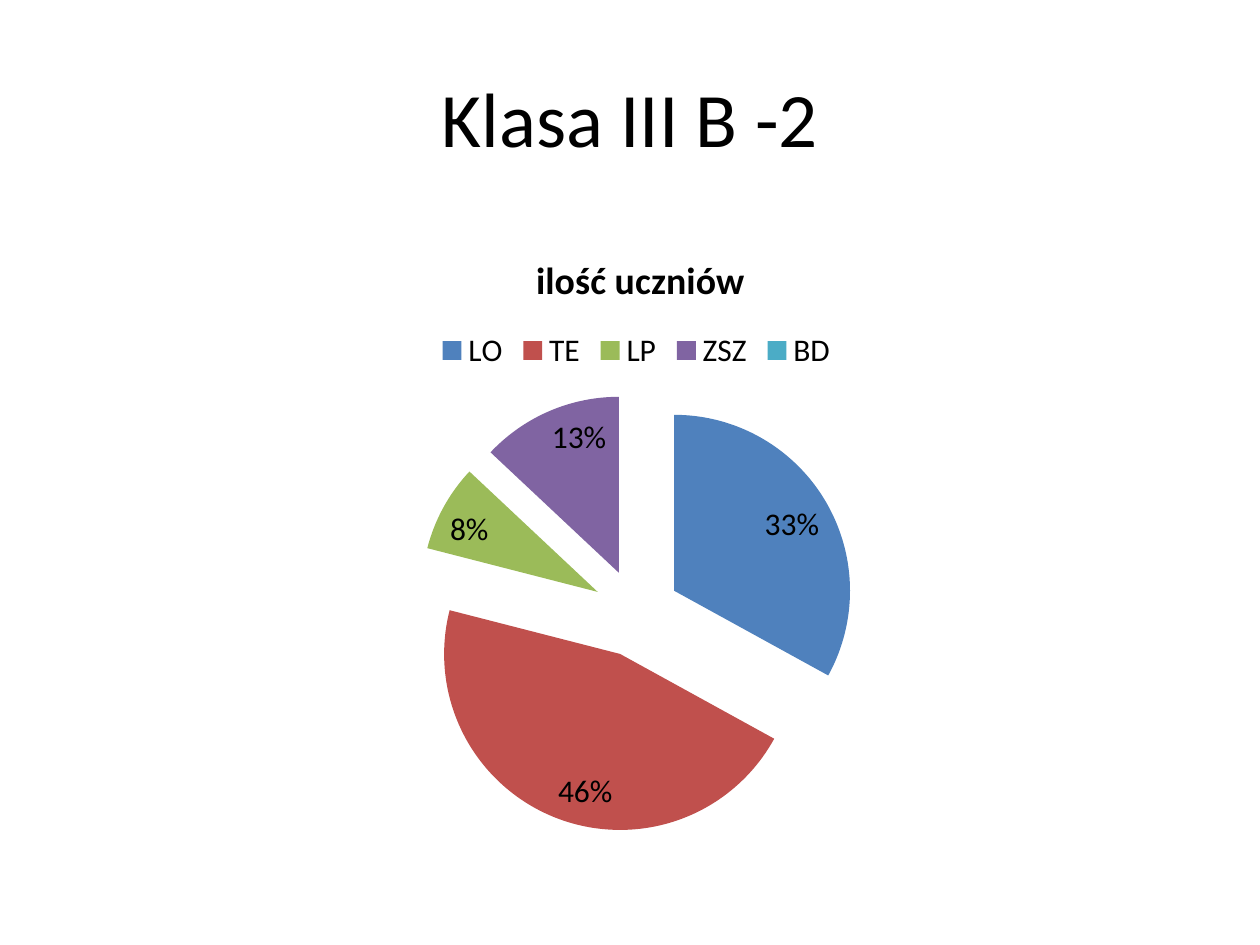
"""Builds a slide with an exploded pie chart of pupils by school type."""
import pptx
import pptx.chart.data
import pptx.dml.color
import pptx.enum.chart
import pptx.enum.text
import pptx.oxml
import pptx.oxml.ns
import pptx.util

Inches = pptx.util.Inches
Pt = pptx.util.Pt
RGBColor = pptx.dml.color.RGBColor

BLACK = RGBColor(0x00, 0x00, 0x00)
BLUE = RGBColor(0x4F, 0x81, 0xBD)
RED = RGBColor(0xC0, 0x50, 0x4D)
GREEN = RGBColor(0x9B, 0xBB, 0x59)
PURPLE = RGBColor(0x80, 0x64, 0xA2)
AQUA = RGBColor(0x4B, 0xAC, 0xC6)

PUPILS = [("LO", 33, BLUE), ("TE", 46, RED), ("LP", 8, GREEN),
          ("ZSZ", 13, PURPLE), ("BD", 0, AQUA)]


def chart_element(markup):
    return pptx.oxml.parse_xml(markup.replace(">", f' {pptx.oxml.ns.nsdecls("c")}>', 1))


class SlideBuilder:
    def __init__(self, slide, font_name="Calibri", color=BLACK):
        self.slide = slide
        self.font_name = font_name
        self.color = color

    def style(self, font, size, bold=False):
        font.name = self.font_name
        font.size = Pt(size)
        font.bold = bold
        font.color.rgb = self.color

    def add_run(self, paragraph, text, size, bold=False):
        run = paragraph.add_run()
        run.text = text
        self.style(run.font, size, bold)

    def add_title(self, text, left, top, width, height):
        shape = self.slide.shapes.add_textbox(
            Inches(left), Inches(top), Inches(width), Inches(height))
        frame = shape.text_frame
        frame.word_wrap = True
        frame.vertical_anchor = pptx.enum.text.MSO_ANCHOR.MIDDLE
        paragraph = frame.paragraphs[0]
        paragraph.alignment = pptx.enum.text.PP_ALIGN.CENTER
        self.add_run(paragraph, text, 44)

    def add_pie(self, title, rows, left, top, width, height, explosion=25):
        data = pptx.chart.data.CategoryChartData()
        data.categories = [name for name, value, color in rows]
        data.add_series(title, [value for name, value, color in rows])
        chart = self.slide.shapes.add_chart(
            pptx.enum.chart.XL_CHART_TYPE.PIE, Inches(left), Inches(top),
            Inches(width), Inches(height), data).chart
        self.style(chart.font, 18)

        chart.has_title = True
        self.add_run(chart.chart_title.text_frame.paragraphs[0], title, 21.6, True)
        chart.chart_title.include_in_layout = False

        chart.has_legend = True
        chart.legend.position = pptx.enum.chart.XL_LEGEND_POSITION.TOP
        chart.legend.include_in_layout = False
        self.style(chart.legend.font, 18)

        plot = chart.plots[0]
        plot.vary_by_categories = True
        series = plot.series[0]
        series_name = series._element.find(pptx.oxml.ns.qn("c:tx"))
        series_name.addnext(chart_element(f'<c:explosion val="{explosion}"></c:explosion>'))
        for index, (name, value, color) in enumerate(rows):
            fill = series.points[index].format.fill
            fill.solid()
            fill.fore_color.rgb = color

        labels = series.data_labels
        labels.show_percentage = True
        labels.show_value = False
        labels.number_format = "0%"
        labels.number_format_is_linked = False
        labels.position = pptx.enum.chart.XL_LABEL_POSITION.INSIDE_END
        self.style(labels.font, 18)
        empty = [index for index, (name, value, color) in enumerate(rows) if not value]
        for index in reversed(empty):
            labels._element.insert(0, chart_element(
                f'<c:dLbl><c:idx val="{index}"/><c:delete val="1"/></c:dLbl>'))


def main():
    presentation = pptx.Presentation()
    presentation.slide_width = Inches(10)
    presentation.slide_height = Inches(7.5)
    slide = presentation.slides.add_slide(presentation.slide_layouts[6])
    builder = SlideBuilder(slide)
    builder.add_title("Klasa III B -2", 0.5, 0.3, 9, 1.25)
    builder.add_pie(" ilość uczniów", PUPILS, 0.55, 1.8, 9, 4.95)
    presentation.save("out.pptx")


if __name__ == "__main__":
    main()
